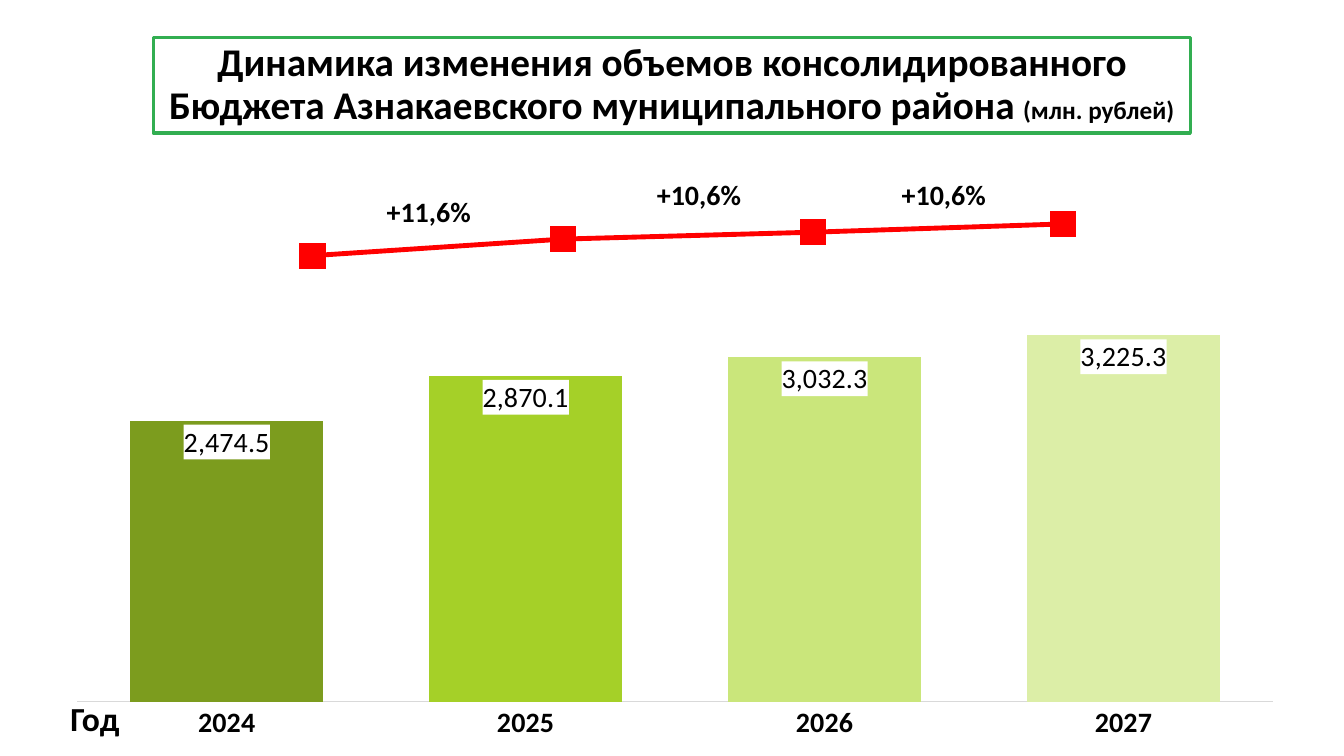
from lxml import etree
from pptx import Presentation
from pptx.chart.data import CategoryChartData
from pptx.dml.color import RGBColor
from pptx.enum.chart import (XL_CHART_TYPE, XL_LABEL_POSITION,
                             XL_MARKER_STYLE, XL_TICK_MARK)
from pptx.enum.text import MSO_ANCHOR, MSO_AUTO_SIZE, PP_ALIGN
from pptx.oxml.ns import qn
from pptx.util import Cm, Pt

BAR, LINE = XL_CHART_TYPE.COLUMN_CLUSTERED, XL_CHART_TYPE.LINE_MARKERS
INSIDE, SQUARE = XL_LABEL_POSITION.INSIDE_END, XL_MARKER_STYLE.SQUARE
NO_TICK, CENTER = XL_TICK_MARK.NONE, PP_ALIGN.CENTER
MIDDLE, GROW = MSO_ANCHOR.MIDDLE, MSO_AUTO_SIZE.SHAPE_TO_FIT_TEXT
FONT = "Calibri"

# Content: runs are (text, size)
TITLE = [
    [("Динамика изменения объемов консолидированного", 28)],
    [("Бюджета Азнакаевского муниципального района ", 28),
     ("(млн. рублей)", 18)],
]
BUDGET = [  # year, volume, bar colour
    ("2024", 2474.5, "7C9C1E"),
    ("2025", 2870.1, "A5D028"),
    ("2026", 3032.3, "CAE67B"),
    ("2027", 3225.3, "DCEEA7"),
]
TREND = [("1", 77), ("2", 89), ("3", 94), ("4", 100)]
NOTES = [  # text, size, box in cm
    ("+11,6%", 20, (9.47, 4.78, 2.67, 1.12)),
    ("+10,6%", 20, (16.28, 4.34, 2.67, 1.12)),
    ("+10,6%", 20, (22.45, 4.34, 2.67, 1.12)),
    ("Год", 24, (1.52, 17.45, 1.75, 1.27)),
]


def color(code):
    return RGBColor.from_string(code)


def style(font, size, bold=False):
    font.name, font.size, font.bold = FONT, Pt(size), bold
    font.color.rgb = color("000000")


def write(frame, lines, space=None):
    frame.word_wrap = False
    frame.auto_size = GROW
    for i, runs in enumerate(lines):
        para = frame.add_paragraph() if i else frame.paragraphs[0]
        para.alignment = CENTER
        if space:
            para.line_spacing = space
        for text, size in runs:
            run = para.add_run()
            run.text = text
            style(run.font, size, True)


def add_plot(kind, rows, box, area, top):
    data = CategoryChartData()
    data.categories = [row[0] for row in rows]
    data.add_series("Series 1", [row[1] for row in rows])
    chart = slide.shapes.add_chart(kind, *map(Cm, box), data).chart
    chart.has_legend = chart.has_title = False
    style(chart.font, 16)
    axis = chart.value_axis
    axis.minimum_scale, axis.maximum_scale = 0, top
    axis.has_major_gridlines = False
    axis.visible = False
    # Fixed inner plot area
    plot = chart.element.find(".//" + qn("c:plotArea"))
    for old in plot.findall(qn("c:layout")):
        plot.remove(old)
    layout = etree.Element(qn("c:layout"))
    plot.insert(0, layout)
    manual = etree.SubElement(layout, qn("c:manualLayout"))
    pairs = [("layoutTarget", "inner"), ("xMode", "edge"), ("yMode", "edge")]
    for tag, val in pairs + list(zip("xywh", area)):
        etree.SubElement(manual, qn("c:" + tag)).set("val", str(val))
    return chart


deck = Presentation()
deck.slide_width, deck.slide_height = Cm(33.87), Cm(19.05)
slide = deck.slides.add_slide(deck.slide_layouts[5])

# Budget columns
chart = add_plot(BAR, BUDGET, (1.32, 7.44, 31.39, 11.51),
                 (0.02, 0.02, 0.96, 0.87), 3500)
axis = chart.category_axis
axis.major_tick_mark = NO_TICK
axis.format.line.color.rgb = color("D9D9D9")
axis.format.line.width = Pt(0.75)
style(axis.tick_labels.font, 20, True)
plot = chart.plots[0]
plot.gap_width = 55
plot.vary_by_categories = False
bars = plot.series[0]
for i, (year, volume, shade) in enumerate(BUDGET):
    fill = bars.points[i].format.fill
    fill.solid()
    fill.fore_color.rgb = color(shade)

# White value labels inside the columns
labels = bars.data_labels
labels.show_value = True
labels.position = INSIDE
labels.number_format = "#,##0.0"
labels.number_format_is_linked = False
style(labels.font, 20)
props = etree.Element(qn("c:spPr"))
solid = etree.SubElement(props, qn("a:solidFill"))
etree.SubElement(solid, qn("a:srgbClr")).set("val", "FFFFFF")
form = chart.element.find(".//" + qn("c:dLbls") + "/" + qn("c:numFmt"))
form.addnext(props)

# Title
title = slide.shapes.title
title.left, title.top, title.width, title.height = map(
    Cm, (3.86, 0.94, 26.14, 2.41))
title.line.color.rgb = color("32AE51")
title.line.width = Pt(2.25)
title.text_frame.vertical_anchor = MIDDLE
write(title.text_frame, TITLE, 0.9)

# Growth line
chart = add_plot(LINE, TREND, (4.39, 4.93, 25.86, 4.19),
                 (0.013, 0.1, 0.975, 0.9), 108.5)
chart.category_axis.visible = False
trend = chart.plots[0].series[0]
chart.plots[0].vary_by_categories = False
trend.smooth = False
trend.format.line.color.rgb = color("FF0000")
trend.format.line.width = Pt(3.5)
mark = trend.marker
mark.style, mark.size = SQUARE, 18
mark.format.fill.solid()
mark.format.fill.fore_color.rgb = color("FF0000")
mark.format.line.color.rgb = color("FF0000")

# Growth rates and axis name
for text, size, box in NOTES:
    note = slide.shapes.add_textbox(*map(Cm, box))
    write(note.text_frame, [[(text, size)]])

deck.save("out.pptx")
